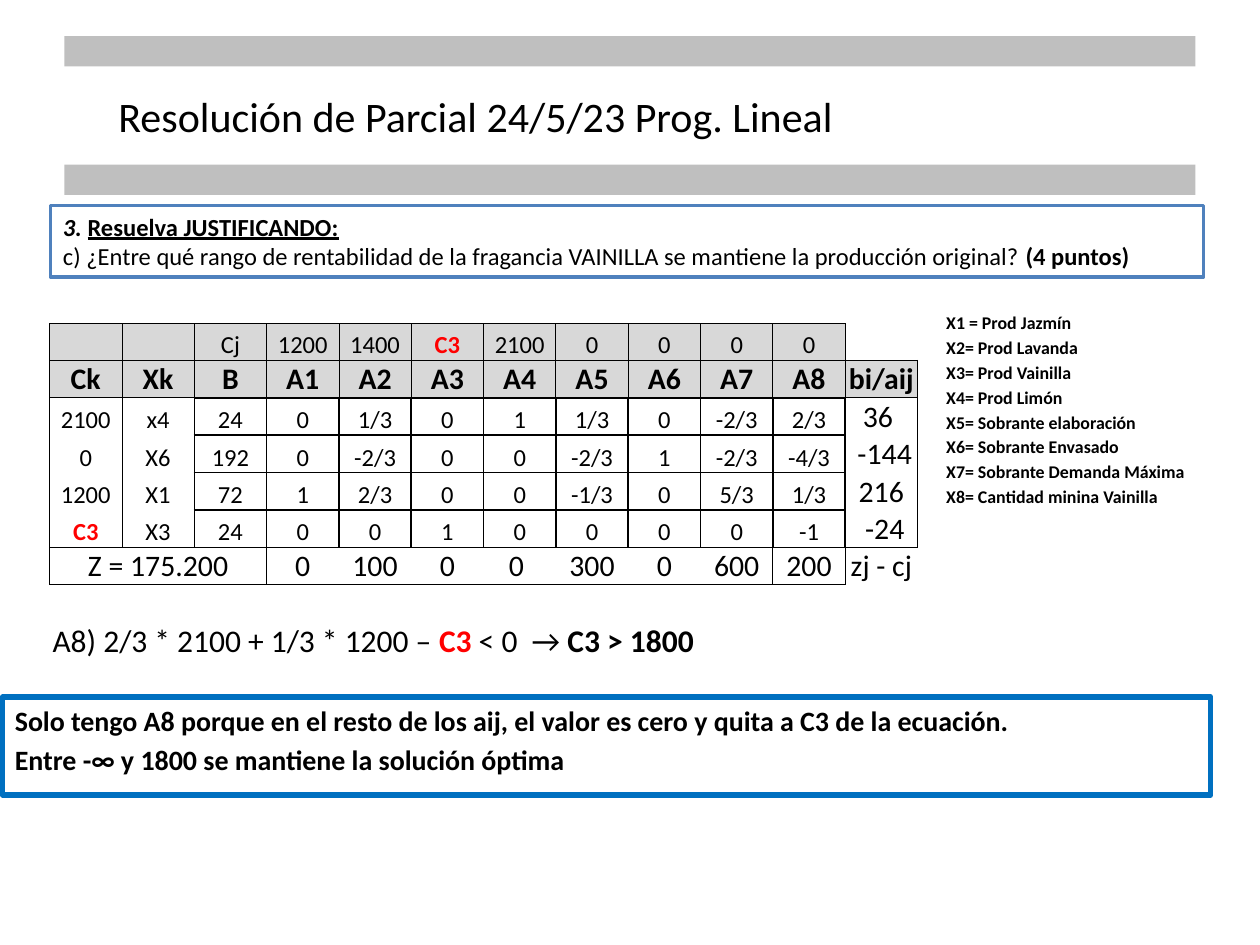
"""Build the slide on the profit range of the Vainilla fragrance."""
from lxml.etree import SubElement
from pptx import Presentation
from pptx.dml.color import RGBColor
from pptx.enum.shapes import MSO_SHAPE
from pptx.enum.text import MSO_ANCHOR, MSO_AUTO_SIZE, PP_ALIGN
from pptx.oxml.ns import qn
from pptx.util import Cm, Pt

RECT = MSO_SHAPE.RECTANGLE
MID, LOW, TOP = MSO_ANCHOR.MIDDLE, MSO_ANCHOR.BOTTOM, MSO_ANCHOR.TOP
MIDDLE, LEFT = PP_ALIGN.CENTER, PP_ALIGN.LEFT
FIXED = MSO_AUTO_SIZE.NONE
BLACK, RED, GRAY = "000000", "FF0000", "D8D8D8"


def tint(code):
    return RGBColor.from_string(code)


def write(par, runs, size, align=LEFT):
    par.alignment = align
    par.font.size = Pt(size)
    par.font.name = "Calibri"
    for text, style, color in runs:
        run = par.add_run()
        run.text = text
        run.font.bold = "b" in style
        run.font.italic = "i" in style
        run.font.underline = "u" in style
        run.font.color.rgb = tint(color)


deck = Presentation()
deck.slide_width, deck.slide_height = Cm(25.4), Cm(19.05)
slide = deck.slides.add_slide(deck.slide_layouts[1])
shapes = slide.shapes

for y in (0.73, 3.32):
    bar = shapes.add_shape(RECT, Cm(1.3), Cm(y), Cm(22.8), Cm(0.61))
    bar.shadow.inherit = False
    bar.fill.solid()
    bar.fill.fore_color.rgb = tint("BFBFBF")
    bar.line.fill.background()

title = shapes.title
title.left, title.top, title.width, title.height = Cm(1.27), Cm(0.76), Cm(16.64), Cm(3.15)
title.text_frame.vertical_anchor = MID
write(title.text_frame.paragraphs[0],
      [("Resolución de Parcial 24/5/23 Prog. Lineal", "", BLACK)], 24, MIDDLE)

task = [
    [("3. ", "bi", BLACK), ("Resuelva JUSTIFICANDO:", "bu", BLACK)],
    [("c) ¿Entre qué rango de rentabilidad de la fragancia VAINILLA se mantiene "
      "la producción original? ", "", BLACK), ("(4 puntos)", "b", BLACK)],
]
answer = [
    [("Solo tengo A8 porque en el resto de los aij, el valor es cero y quita a C3 "
      "de la ecuación.", "b", BLACK)],
    [("Entre -∞ y 1800 se mantiene la solución óptima", "b", BLACK)],
]
panels = [
    (1.02, 4.14, 23.24, 1.45, "4F81BD", 2, 14, 0, task),
    (0.05, 14.05, 24.36, 1.98, "0070C0", 3, 16, 3.2, answer),
]
for x, y, w, h, color, line, size, gap, lines in panels:
    box = shapes.add_shape(RECT, Cm(x), Cm(y), Cm(w), Cm(h))
    box.shadow.inherit = False
    box.fill.solid()
    box.fill.fore_color.rgb = tint("FFFFFF")
    box.line.color.rgb = tint(color)
    box.line.width = Pt(line)
    frame = box.text_frame
    frame.word_wrap = True
    frame.vertical_anchor = TOP
    for i, runs in enumerate(lines):
        par = frame.add_paragraph() if i else frame.paragraphs[0]
        write(par, runs, size)
        par.space_before = Pt(gap if i else 0)

data = [
    ["", "", "Cj", "1200", "1400", "C3", "2100", "0", "0", "0", "0", ""],
    ["Ck", "Xk", "B", "A1", "A2", "A3", "A4", "A5", "A6", "A7", "A8", "bi/aij"],
    ["2100", "x4", "24", "0", "1/3", "0", "1", "1/3", "0", "-2/3", "2/3", "36 "],
    ["0", "X6", "192", "0", "-2/3", "0", "0", "-2/3", "1", "-2/3", "-4/3", " -144"],
    ["1200", "X1", "72", "1", "2/3", "0", "0", "-1/3", "0", "5/3", "1/3", "216"],
    ["C3", "X3", "24", "0", "0", "1", "0", "0", "0", "0", "-1", " -24"],
    ["Z = 175.200", "", "", "0", "100", "0", "0 ", "300", "0", "600", "200", "zj - cj"],
]
rows, cols = len(data), len(data[0])
last = cols - 1
grid = shapes.add_table(rows, cols, Cm(1), Cm(6.52), Cm(17.5), Cm(5.22)).table
grid.first_row = grid.horz_banding = False
for row in grid.rows:
    row.height = Cm(5.22 / rows)
for col in grid.columns:
    col.width = Cm(17.5 / cols)

for r, line in enumerate(data):
    for c, text in enumerate(line):
        cell = grid.cell(r, c)
        head = r < 2 and (r, c) != (0, last)
        body = 2 <= r <= 5 and 2 <= c < last
        if head or body or (r == 6 and (c < 3 or c == 10)):
            sides = "LRTB"
        elif r == 0:
            sides = "LB"
        elif r < 6:
            sides = "LR" + {2: "T", 5: "B"}.get(r, "")
        elif c == last:
            sides = "LT"
        else:
            sides = "TB" + {3: "L", 9: "R"}.get(c, "")
        props = cell._tc.get_or_add_tcPr()
        for side in "LRTB":
            edge = SubElement(props, qn("a:ln" + side), w=str(Pt(1 if body else 0.5)))
            if side in sides:
                ink = SubElement(edge, qn("a:solidFill"))
                SubElement(ink, qn("a:srgbClr"), val=BLACK)
            else:
                SubElement(edge, qn("a:noFill"))
        if head:
            cell.fill.solid()
            cell.fill.fore_color.rgb = tint(GRAY)
        else:
            cell.fill.background()
        wide = r == 6 or (c == last and r > 0)
        cell.margin_left = cell.margin_right = cell.margin_top = Cm(0.02 if wide else 0)
        cell.margin_bottom = 0
        cell.vertical_anchor = MID if (r, c) == (1, last) else LOW
        size = 17 if wide or r == 1 else 14
        par = cell.text_frame.paragraphs[0]
        if text:
            mark = text == "C3"
            write(par, [(text, "b" if mark or r == 1 else "", RED if mark else BLACK)],
                  size, MIDDLE)
        else:
            SubElement(par._p, qn("a:endParaRPr"), sz=str(size * 100))
grid.cell(6, 0).merge(grid.cell(6, 2))

names = ["X1 = Prod Jazmín", "X2= Prod Lavanda", "X3= Prod Vainilla", "X4= Prod Limón",
         "X5= Sobrante elaboración", "X6= Sobrante Envasado",
         "X7= Sobrante Demanda Máxima", "X8= Cantidad minina Vainilla"]
key = slide.placeholders[1]
key.left, key.top, key.width, key.height = Cm(18.82), Cm(6.15), Cm(6.58), Cm(3.71)
frame = key.text_frame
frame.auto_size = FIXED
for i, name in enumerate(names):
    par = frame.add_paragraph() if i else frame.paragraphs[0]
    SubElement(par._p.get_or_add_pPr(), qn("a:buNone"))
    write(par, [(name, "b", BLACK)], 10.2)
    par.space_before = Pt(2 if i else 0)

note = shapes.add_textbox(Cm(0.81), Cm(12.4), Cm(16.31), Cm(1.02))
note.text_frame.word_wrap = True
write(note.text_frame.paragraphs[0],
      [("A8) 2/3 * 2100 + 1/3 * 1200 – ", "", BLACK), ("C3", "b", RED),
       (" < 0  → ", "", BLACK), ("C3 > 1800", "b", BLACK)], 18)

deck.save("out.pptx")
